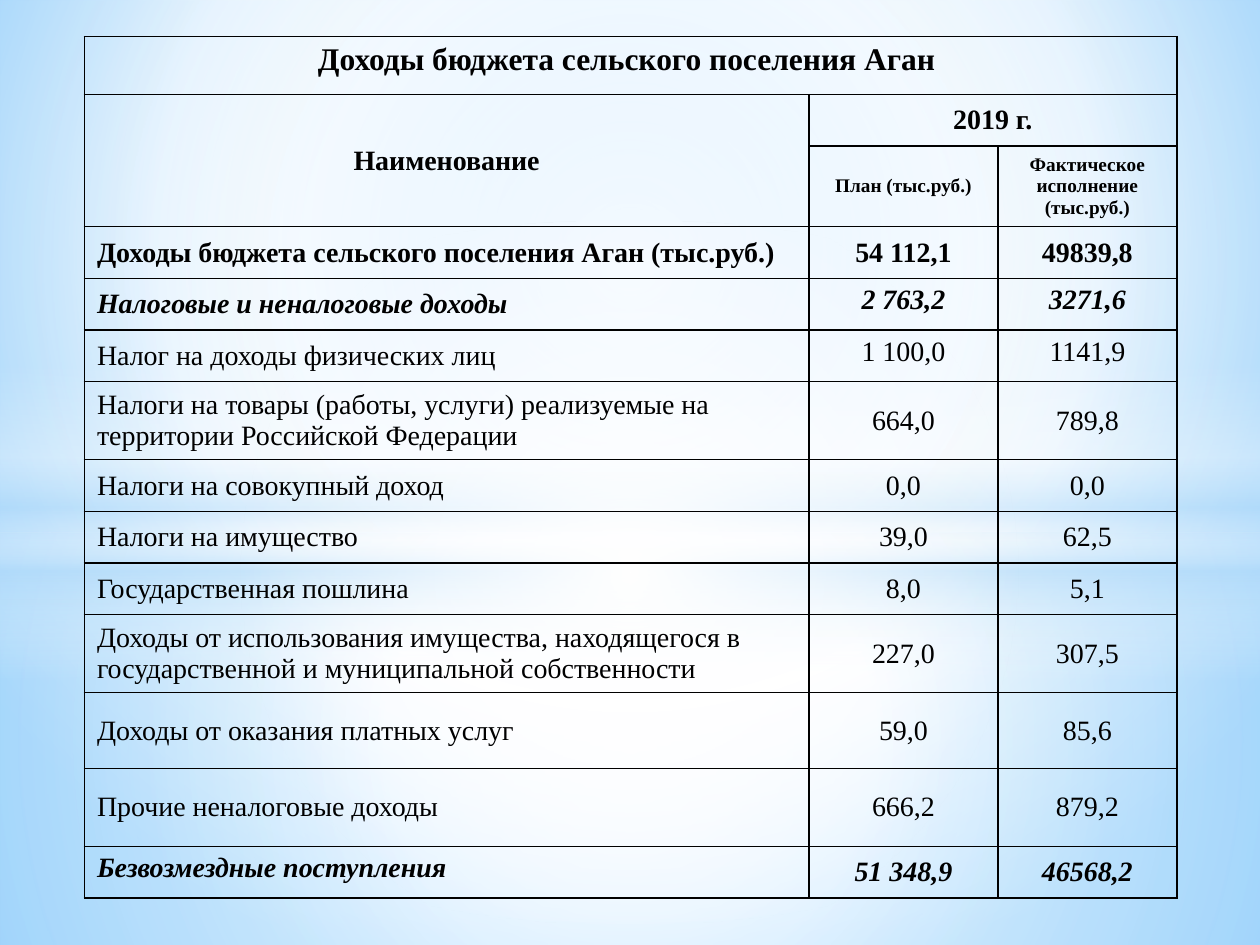
import pptx
import pptx.dml.color
import pptx.enum.shapes
import pptx.enum.text
import pptx.oxml
import pptx.oxml.ns
import pptx.util
from pptx.util import Inches

FONT = "Times New Roman"
SHAPE = pptx.enum.shapes.MSO_SHAPE
ALIGN = pptx.enum.text.PP_ALIGN
ANCHOR = pptx.enum.text.MSO_ANCHOR
NS = pptx.oxml.ns.nsdecls("a")
CENTRE = (50, 50, 50, 50)


def rgb(value):
    return pptx.dml.color.RGBColor.from_string(value)


def gradient(stops, focus=None, angle=0):
    """Gradient fill from (position, colour, opacity) in percent; circular if focus is given."""
    gs = "".join(
        f'<a:gs pos="{pos * 1000}"><a:srgbClr val="{color}">'
        f'<a:alpha val="{alpha * 1000}"/></a:srgbClr></a:gs>'
        for pos, color, alpha in stops)
    if focus:
        sides = " ".join(f'{k}="{v * 1000}"' for k, v in zip("ltrb", focus))
        kind = f'<a:path path="circle"><a:fillToRect {sides}/></a:path>'
    else:
        kind = f'<a:lin ang="{angle * 60000}" scaled="0"/>'
    return pptx.oxml.parse_xml(
        f'<a:gradFill {NS} rotWithShape="1"><a:gsLst>{gs}</a:gsLst>{kind}</a:gradFill>')


class Deck:
    def __init__(self, width, height):
        self.prs = pptx.Presentation()
        self.prs.slide_width = Inches(width)
        self.prs.slide_height = Inches(height)
        self.s = self.prs.slides.add_slide(self.prs.slide_layouts[6])
        self.color = "000000"

    def fill_gradient(self, fill, parent, grad):
        """Swap the solid fill in parent for a gradient."""
        fill.solid()
        solid = parent.find(pptx.oxml.ns.qn("a:solidFill"))
        parent.replace(solid, grad)

    def background(self, grad):
        fill = self.s.background.fill
        fill.solid()
        self.fill_gradient(fill, self.s.element.xpath(".//p:bgPr")[0], grad)

    def glow(self, shape, box, grad):
        sp = self.s.shapes.add_shape(shape, *map(Inches, box))
        sp.shadow.inherit = False
        sp.line.fill.background()
        self.fill_gradient(sp.fill, sp.element.spPr, grad)

    def table(self, left, top, widths, heights):
        frame = self.s.shapes.add_table(
            len(heights), len(widths), Inches(left), Inches(top),
            Inches(sum(widths)), Inches(sum(heights)))
        table = frame.table
        table.first_row = table.horz_banding = False
        for col, width in zip(table.columns, widths):
            col.width = Inches(width)
        for row, height in zip(table.rows, heights):
            row.height = Inches(height)
        for cell in table.iter_cells():
            self.border(cell)
            cell.fill.background()
        return table

    def border(self, cell):
        tcPr = cell._tc.get_or_add_tcPr()
        for side in "LRTB":
            tcPr.append(pptx.oxml.parse_xml(
                f'<a:ln{side} {NS} w="12700"><a:solidFill><a:srgbClr val="{self.color}"/>'
                f'</a:solidFill></a:ln{side}>'))

    def cell(self, cell, text, size=16, bold=False, italic=False,
             align=ALIGN.CENTER, anchor=ANCHOR.MIDDLE):
        cell.vertical_anchor = anchor
        p = cell.text_frame.paragraphs[0]
        p.alignment = align
        r = p.add_run()
        r.text = text
        r.font.name = FONT
        r.font.size = pptx.util.Pt(size)
        r.font.bold = bold
        r.font.italic = italic
        r.font.color.rgb = rgb(self.color)


# name, plan, actual, row height
INCOME = [
    ("Доходы бюджета сельского поселения Аган (тыс.руб.)", "54 112,1", "49839,8", 0.41),
    ("Налоговые и неналоговые доходы", "2 763,2", "3271,6", 0.41),
    ("Налог на доходы физических лиц", "1 100,0", "1141,9", 0.41),
    ("Налоги на товары (работы, услуги) реализуемые на территории Российской Федерации",
     "664,0", "789,8", 0.62),
    ("Налоги на совокупный доход", "0,0", "0,0", 0.41),
    ("Налоги на имущество", "39,0", "62,5", 0.41),
    ("Государственная пошлина", "8,0", "5,1", 0.41),
    ("Доходы от использования имущества, находящегося в государственной "
     "и муниципальной собственности", "227,0", "307,5", 0.62),
    ("Доходы от оказания платных услуг", "59,0", "85,6", 0.6),
    ("Прочие неналоговые доходы", "666,2", "879,2", 0.62),
    ("Безвозмездные поступления", "51 348,9", "46568,2", 0.41),
]
HEADER_HEIGHTS = [0.46, 0.41, 0.64]
TOTAL, TAXES, PERSONAL_TAX, GRANTS = 0, 1, 2, len(INCOME) - 1


def draw_backdrop(deck):
    deck.background(gradient(
        [(0, "9ED5FF", 100), (60, "FFFFFF", 100), (100, "5BB9FF", 100)], (20, 10, 20, 60)))
    deck.glow(SHAPE.RECTANGLE, (0, 4.23, 10, 3.27), gradient(
        [(0, "FFFFFF", 91), (37, "FFFFFF", 76), (100, "B4DCFA", 79)], CENTRE))
    deck.glow(SHAPE.RECTANGLE, (0, 0, 10, 4.23), gradient(
        [(0, "FFFFFF", 89), (48, "FFFFFF", 62), (100, "B4DCFA", 79)], CENTRE))
    deck.glow(SHAPE.RECTANGLE, (0, 2.9, 10, 2.5), gradient(
        [(0, "FFFFFF", 0), (29, "FFFFFF", 30), (45, "B4DCFA", 40),
         (55, "FFFFFF", 26), (65, "B4DCFA", 60), (100, "FFFFFF", 0)], angle=90))
    deck.glow(SHAPE.OVAL, (0, 1.75, 10, 5.58), gradient(
        [(0, "FFFFFF", 100), (54, "FFFFFF", 0)], CENTRE))


def draw_income(deck):
    heights = HEADER_HEIGHTS + [row[-1] for row in INCOME]
    table = deck.table(0.67, 0.29, [5.75, 1.5, 1.42], heights)
    table.cell(0, 0).merge(table.cell(0, 2))
    table.cell(1, 0).merge(table.cell(2, 0))
    table.cell(1, 1).merge(table.cell(1, 2))

    deck.cell(table.cell(0, 0), "Доходы бюджета сельского поселения Аган ", 18, True,
              anchor=ANCHOR.TOP)
    deck.cell(table.cell(1, 0), "Наименование", bold=True)
    deck.cell(table.cell(1, 1), "2019 г.", bold=True)
    deck.cell(table.cell(2, 1), "План (тыс.руб.)", 11, True)
    deck.cell(table.cell(2, 2), "Фактическое исполнение (тыс.руб.)", 11, True)

    for i, (name, plan, actual, _) in enumerate(INCOME):
        row = i + len(HEADER_HEIGHTS)
        style = {"bold": i in (TOTAL, TAXES, GRANTS), "italic": i in (TAXES, GRANTS)}
        deck.cell(table.cell(row, 0), name, align=ALIGN.LEFT,
                  anchor=ANCHOR.TOP if i == GRANTS else ANCHOR.MIDDLE, **style)
        anchor = ANCHOR.TOP if i in (TAXES, PERSONAL_TAX) else ANCHOR.MIDDLE
        for col, value in enumerate((plan, actual), 1):
            deck.cell(table.cell(row, col), value, anchor=anchor, **style)


def main():
    deck = Deck(10, 7.5)
    draw_backdrop(deck)
    draw_income(deck)
    deck.prs.save("out.pptx")


if __name__ == "__main__":
    main()
